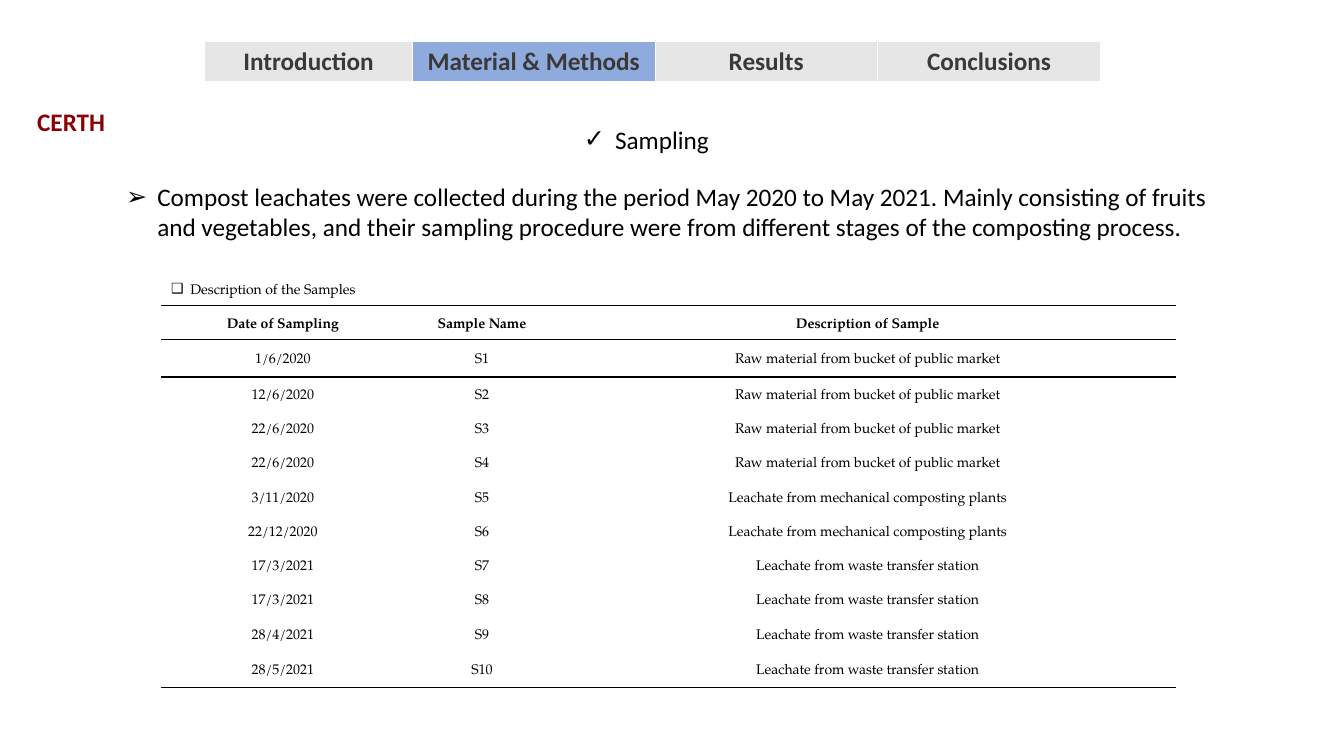
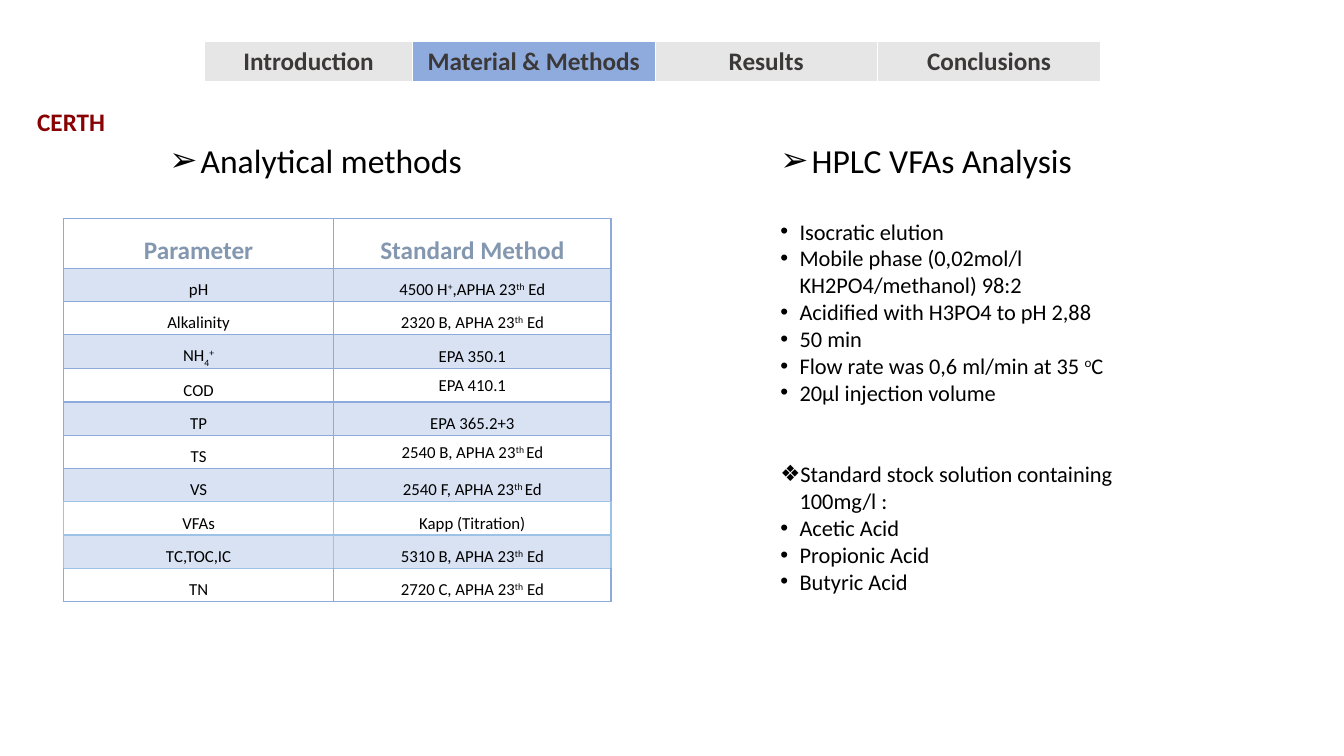
from lxml.etree import SubElement
from pptx import Presentation
from pptx.dml.color import RGBColor
from pptx.enum.text import MSO_ANCHOR, MSO_AUTO_SIZE, PP_ALIGN
from pptx.oxml.ns import qn
from pptx.util import Pt

PX = 9144  # 100 px to the inch
BLACK = RGBColor(0x00, 0x00, 0x00)
WHITE = RGBColor(0xFF, 0xFF, 0xFF)
MAROON = RGBColor(0x88, 0x01, 0x03)
DARK = RGBColor(0x3B, 0x38, 0x38)
GREY = RGBColor(0xE7, 0xE6, 0xE6)
ACTIVE = RGBColor(0x8F, 0xAA, 0xDC)
SLATE = RGBColor(0x84, 0x97, 0xB0)
BAND = RGBColor(0xD9, 0xE2, 0xF3)
BLUE = RGBColor(0x8E, 0xAA, 0xDB)
SKY = RGBColor(0x9C, 0xC2, 0xE5)

SANS, SERIF = "Calibri", "TeX Gyre Pagella"
PLAIN_STYLE = "{2D5ABB26-0587-4C30-8999-92F81FD0307C}"
BASE = {"^": "30000", "_": "-25000"}
CENTER = {"alignment": PP_ALIGN.CENTER}
TABS = ["Introduction", "Material & Methods", "Results", "Conclusions"]

MARKET = "Raw material from bucket of public market"
PLANT = "Leachate from mechanical composting plants"
STATION = "Leachate from waste transfer station"
SAMPLES = [
    ("1/6/2020", MARKET), ("12/6/2020", MARKET), ("22/6/2020", MARKET),
    ("22/6/2020", MARKET), ("3/11/2020", PLANT), ("22/12/2020", PLANT),
    ("17/3/2021", STATION), ("17/3/2021", STATION),
    ("28/4/2021", STATION), ("28/5/2021", STATION),
]
# In these texts | parts runs, ^ raises a run and _ lowers it
METHODS = [
    ("Parameter", "Standard Method"),
    ("pH", "4500 H|^+|,APHA 23|^th| Ed"),
    ("Alkalinity", "2320 B, APHA 23|^th| Ed"),
    ("NH|_4|^+", "EPA 350.1"),
    ("COD", "EPA 410.1"),
    ("TP", "EPA 365.2+3"),
    ("TS", "2540 B, APHA 23|^th |Ed"),
    ("VS", "2540 F, APHA 23|^th |Ed"),
    ("VFAs", "Kapp (Titration)"),
    ("ΤC,TOC,IC", "5310 B, APHA 23|^th| Ed"),
    ("TN", "2720 C, APHA 23|^th| Ed"),
]
RAISED = {"COD", "TS"}  # rows whose method sits higher
ELUTION = [
    "Isocratic elution",
    "Mobile phase (0,02mol/l KH2PO4/methanol) 98:2",
    "Acidified with H3PO4 to pH 2,88",
    "50 min",
    "Flow rate was 0,6 ml/min at 35 |^o|C",
    "20μl injection volume",
]
STOCK = "Standard stock solution containing 100mg/l :"
ACIDS = ["Acetic Acid", "Propionic Acid", "Butyric Acid"]


def apply(obj, values):
    for name, value in values.items():
        setattr(obj, name, value)


def place(shape, box):
    apply(shape, dict(zip(("left", "top", "width", "height"), [n * PX for n in box])))


def write(para, text, size, color=BLACK, name=SANS, bold=False, **form):
    """Fill one paragraph with runs."""
    for part in text.split("|"):
        run = para.add_run()
        run.text = part.lstrip("^_")
        apply(run.font, {"size": Pt(size), "name": name, "bold": bold})
        run.font.color.rgb = color
        if part[0] in BASE:
            run.font._element.set("baseline", BASE[part[0]])
    apply(para, form)


def mark(para, char, indent):
    """Give a paragraph a hanging bullet."""
    props = para._p.get_or_add_pPr()
    props.set("marL", str(indent * PX))
    props.set("indent", str(-indent * PX))
    SubElement(props, qn("a:buFont"), typeface="Arial")
    SubElement(props, qn("a:buChar"), char=char)


def fit(shape, box, wrap=False):
    place(shape, box)
    frame = shape.text_frame
    apply(frame, {"word_wrap": wrap, "auto_size": MSO_AUTO_SIZE.NONE,
                  "vertical_anchor": MSO_ANCHOR.TOP})
    return frame


def point(shape, box, char, text, size, indent=31, wrap=False,
          align=PP_ALIGN.LEFT, **font):
    """One bulleted line in a placeholder or text box."""
    para = fit(shape, box, wrap).paragraphs[0]
    mark(para, char, indent)
    write(para, text, size, alignment=align, space_before=Pt(0), **font)


def label(slide):
    return slide.shapes.add_textbox(0, 0, PX, PX)


def grid(slide, left, top, cols, rows):
    """A bare table with the given column widths and row heights."""
    frame = slide.shapes.add_table(len(rows), len(cols), left * PX, top * PX,
                                   sum(cols) * PX, sum(rows) * PX)
    next(frame.element.iter(qn("a:tableStyleId"))).text = PLAIN_STYLE
    table = frame.table
    apply(table, {"first_row": False, "horz_banding": False})
    for col, width in zip(table.columns, cols):
        col.width = width * PX
    for row, height in zip(table.rows, rows):
        row.height = height * PX
    return table


def dress(cell, fill=None, edges=None, pad=None):
    """Set borders, fill and side margins of a cell."""
    props = cell._tc.get_or_add_tcPr()
    for side in "LRTB":
        if side in (edges or {}):
            color, width = edges[side]
            line = SubElement(props, qn("a:ln" + side), w=str(Pt(width)))
            solid = SubElement(line, qn("a:solidFill"))
            SubElement(solid, qn("a:srgbClr"), val=str(color))
    if fill is None:
        cell.fill.background()
    else:
        cell.fill.solid()
        cell.fill.fore_color.rgb = fill
    if pad is not None:
        apply(cell, {"margin_left": pad * PX, "margin_right": pad * PX,
                     "margin_top": 0, "margin_bottom": 0,
                     "vertical_anchor": MSO_ANCHOR.MIDDLE})


def header(slide, active):
    """Section bar and group name shared by the slides."""
    name = fit(label(slide), (27, 101, 88, 40))
    write(name.paragraphs[0], "CERTH", 18, MAROON, bold=True)
    bar = grid(slide, 203, 41, [206, 241, 220, 222], [41])
    edges = {"L": (WHITE, 1), "R": (WHITE, 1), "T": (WHITE, 1), "B": (WHITE, 3)}
    for cell, text in zip(bar.iter_cells(), TABS):
        dress(cell, ACTIVE if text == active else GREY, edges)
        write(cell.text_frame.paragraphs[0], text, 18, DARK, bold=True, **CENTER)


def sample_table(slide, left, top):
    data = [("Date of Sampling", "Sample Name", "Description of Sample")]
    data += [(day, f"S{i}", kind) for i, (day, kind) in enumerate(SAMPLES, 1)]
    last = len(data) - 1
    table = grid(slide, left, top, [241, 154, 611], [34, 37] + [34] * 8 + [36])
    rule = (BLACK, 1)
    for r, row in enumerate(data):
        edges = {}
        if r < 2:
            edges["T"] = rule
        if r in (0, last):
            edges["B"] = rule
        for c, text in enumerate(row):
            cell = table.cell(r, c)
            dress(cell, None, edges, 0)
            write(cell.text_frame.paragraphs[0], text, 10, name=SERIF,
                  bold=r == 0, line_spacing=Pt(13), **CENTER)


def method_table(slide, left, top):
    table = grid(slide, left, top, [268, 275], [49] + [33] * 10)
    for r, row in enumerate(METHODS):
        sides = (SKY if r in (8, 9) else BLUE, 1)
        edges = {"L": sides, "R": sides,
                 "T": (SKY if r in (8, 9, 10) else BLUE, 1),
                 "B": (SKY if r in (7, 8, 9) else BLUE, 1)}
        for c, text in enumerate(row):
            cell = table.cell(r, c)
            dress(cell, BAND if r % 2 else None, edges, 7)
            form = {"line_spacing": 1.5}
            if c and row[0] in RAISED:
                form = {"line_spacing": 1.07, "space_after": Pt(8)}
            look = (12, BLACK) if r else (18, SLATE)
            write(cell.text_frame.paragraphs[0], text, *look, bold=r == 0,
                  **form, **CENTER)


def hplc_list(shape, box):
    frame = fit(shape, box, True)
    for i, text in enumerate(ELUTION + [STOCK] + ACIDS):
        para = frame.add_paragraph() if i else frame.paragraphs[0]
        mark(para, "❖" if text == STOCK else "•", 19)
        write(para, text, 16, space_before=Pt(39 if text == STOCK else 0))


def sampling(deck):
    slide = deck.slides.add_slide(deck.slide_layouts[1])
    header(slide, "Material & Methods")
    title, body = slide.placeholders
    point(title, (568, 118, 146, 40), "✓", "Sampling", 18, align=PP_ALIGN.CENTER)
    point(body, (115, 175, 1101, 71), "➢",
          "Compost leachates were collected during the period May 2020 to "
          "May 2021. Mainly consisting of fruits and vegetables, and their "
          "sampling procedure were from different stages of the composting "
          "process.", 18, wrap=True)
    point(label(slide), (160, 273, 206, 27), "❑", "Description of the Samples",
          10, 19, name=SERIF)
    sample_table(slide, 160, 303)


def analysis(deck):
    slide = deck.slides.add_slide(deck.slide_layouts[3])
    header(slide, "Material & Methods")
    title, head, body = slide.placeholders
    point(title, (158, 134, 313, 50), "➢", "Analytical methods", 24)
    point(head, (764, 134, 312, 50), "➢", "HPLC VFAs Analysis", 24)
    method_table(slide, 63, 217)
    hplc_list(body, (764, 211, 430, 387))


def main():
    deck = Presentation()
    apply(deck, {"slide_width": 1333 * PX, "slide_height": 750 * PX})
    sampling(deck)
    analysis(deck)
    deck.save("out.pptx")


if __name__ == "__main__":
    main()
